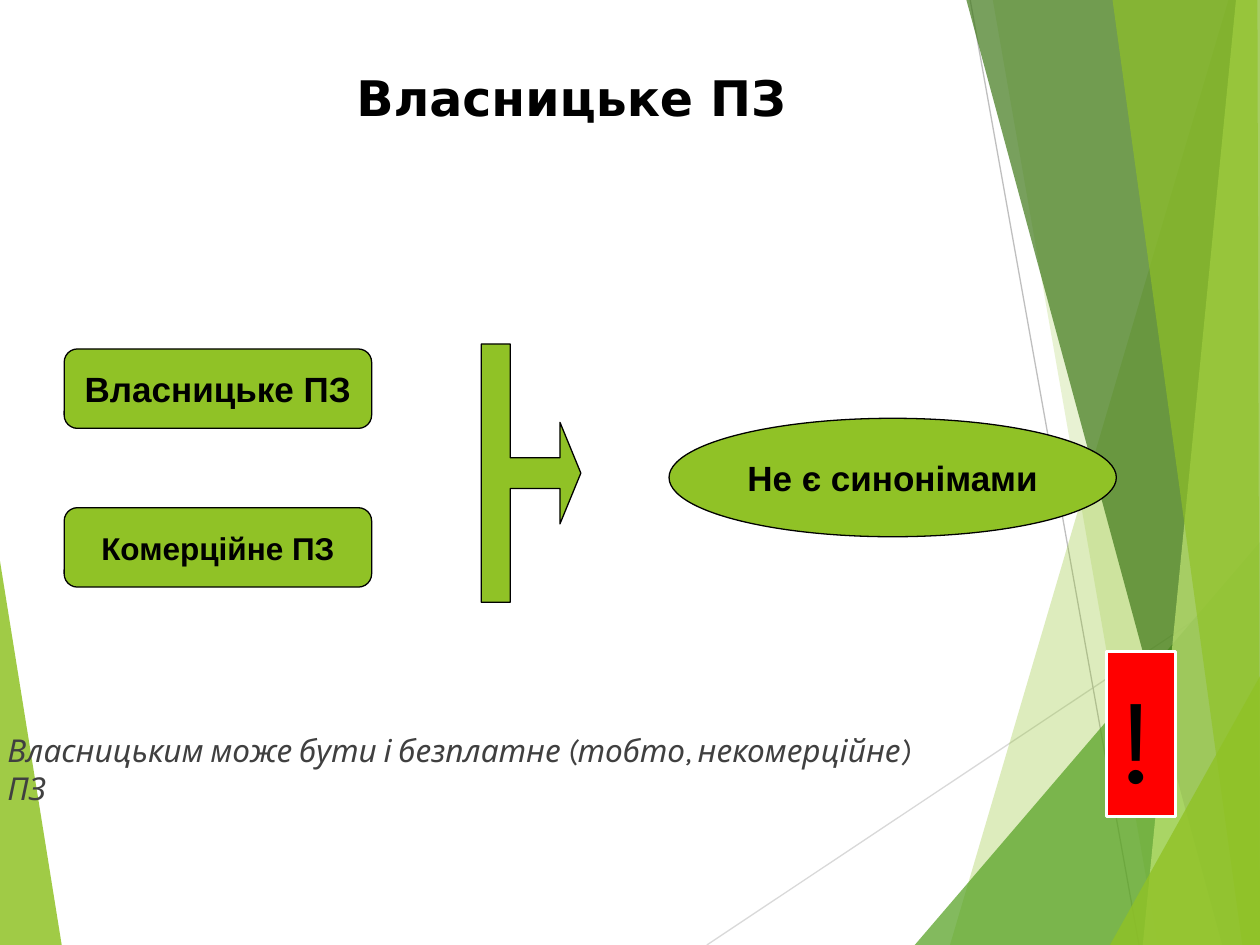
from lxml.etree import SubElement
from pptx import Presentation
from pptx.dml.color import RGBColor
from pptx.enum.shapes import MSO_CONNECTOR, MSO_SHAPE
from pptx.enum.text import MSO_ANCHOR, MSO_AUTO_SIZE, PP_ALIGN
from pptx.oxml.ns import qn
from pptx.util import Inches, Pt

GREEN = "90C226"
BLACK = "000000"
RIGHT = 10.01


def color(hex_code):
    return RGBColor.from_string(hex_code)


class SlideBuilder:
    """Holds the slide and the style its elements share."""

    label_font = "Arial"
    body_font = "Karla"
    title_font = "DejaVu Sans"

    def __init__(self, slide):
        self.slide = slide

    def facet(self, points, fill, opacity):
        """Draw a translucent polygon; opacity is in percent."""
        corners = [(Inches(x), Inches(y)) for x, y in points]
        builder = self.slide.shapes.build_freeform(*corners[0])
        builder.add_line_segments(corners[1:], close=True)
        shape = builder.convert_to_shape()
        shape.shadow.inherit = False
        shape.line.fill.background()
        shape.fill.solid()
        shape.fill.fore_color.rgb = color(fill)
        fill_color = shape._element.spPr.find(qn("a:solidFill"))[0]
        SubElement(fill_color, qn("a:alpha"), val=str(opacity * 1000))

    def line(self, start, end, line_color):
        connector = self.slide.shapes.add_connector(
            MSO_CONNECTOR.STRAIGHT, *map(Inches, start + end))
        connector.line.color.rgb = color(line_color)
        connector.line.width = Pt(0.75)
        SubElement(connector._element.spPr, qn("a:effectLst"))

    def shape(self, kind, box, fill=GREEN, outline=BLACK, width=0.75):
        shape = self.slide.shapes.add_shape(kind, *map(Inches, box))
        shape.shadow.inherit = False
        shape.fill.solid()
        shape.fill.fore_color.rgb = color(fill)
        shape.line.color.rgb = color(outline)
        shape.line.width = Pt(width)
        return shape

    def label(self, kind, box, text, size):
        """Draw a green shape with centred bold text."""
        shape = self.shape(kind, box)
        self.add_text(shape, text, size, self.label_font, bold=True,
                      align=PP_ALIGN.CENTER, anchor=MSO_ANCHOR.MIDDLE, wrap=False)

    def text_box(self, box, text, size, font, **style):
        text_box = self.slide.shapes.add_textbox(*map(Inches, box))
        self.add_text(text_box, text, size, font, **style)
        return text_box

    def add_text(self, shape, text, size, font, text_color=BLACK, bold=False,
                 italic=False, align=PP_ALIGN.LEFT, anchor=MSO_ANCHOR.TOP, wrap=True):
        frame = shape.text_frame
        frame.word_wrap = wrap
        frame.vertical_anchor = anchor
        paragraph = frame.paragraphs[0]
        paragraph.alignment = align
        run = paragraph.add_run()
        run.text = text
        run.font.size = Pt(size)
        run.font.name = font
        run.font.bold = bold
        run.font.italic = italic
        run.font.color.rgb = color(text_color)


def draw_background(builder):
    builder.facet([(-0.01, 4.39), (0.49, 7.5), (-0.01, 7.5)], GREEN, 85)
    builder.line((5.61, 7.5), (RIGHT, 4.57), "D9D9D9")
    builder.line((7.7, 0), (9.04, 7.5), "BFBFBF")
    # Left edge of each facet: x at the top, y of the top, x at the bottom
    facets = [
        (9.75, 0, 7.54, GREEN, 30),
        (7.88, 0, 9.19, GREEN, 20),
        (RIGHT, 4.29, 7.26, "54A021", 72),
        (7.67, 0, 9.7, "3F7819", 70),
        (9.81, 0, 9.07, "C0E474", 70),
        (8.83, 0, 9.86, GREEN, 65),
        (RIGHT, 5.35, 8.81, GREEN, 80),
    ]
    for top_x, top_y, bottom_x, fill, opacity in facets:
        # The 65 % facet tapers to the right and stops just inside the edge
        right_top, right_bottom = (9.98, 10) if opacity == 65 else (RIGHT, RIGHT)
        points = [(top_x, top_y), (bottom_x, 7.5), (right_bottom, 7.5)]
        if top_x < right_top:
            points.append((right_top, top_y))
        builder.facet(points, fill, opacity)


def main():
    presentation = Presentation()
    presentation.slide_width = Inches(10)
    presentation.slide_height = Inches(7.5)
    builder = SlideBuilder(presentation.slides.add_slide(presentation.slide_layouts[6]))

    draw_background(builder)

    remark = builder.text_box(
        (0, 5.7, 7.36, 0.79),
        "Власницьким може бути і безплатне (тобто, некомерційне) ПЗ",
        18, builder.body_font, text_color="404040", italic=True)
    remark.text_frame.margin_left = Inches(0.06)
    remark.text_frame.margin_top = Inches(0.1)
    remark.text_frame.paragraphs[0].space_before = Pt(10)

    terms = [("Власницьке ПЗ", 20), ("Комерційне ПЗ", 18)]
    for index, (term, size) in enumerate(terms):
        builder.label(MSO_SHAPE.ROUNDED_RECTANGLE,
                      (0.51, 2.77 + 1.26 * index, 2.44, 0.63), term, size)

    arrow = builder.shape(MSO_SHAPE.UP_ARROW_CALLOUT, (3.19, 3.36, 2.05, 0.79))
    arrow.rotation = 90
    for index, value in enumerate((0.31, 0.51, 0.21, 0.29)):
        arrow.adjustments[index] = value

    builder.label(MSO_SHAPE.OVAL, (5.31, 3.32, 3.55, 0.94), "Не є синонімами", 20)

    builder.text_box((2.73, 0.36, 3.74, 0.69), "Власницьке ПЗ", 28,
                     builder.title_font, bold=True, anchor=MSO_ANCHOR.BOTTOM)

    warning = builder.shape(MSO_SHAPE.RECTANGLE, (8.78, 5.17, 0.55, 1.31),
                            "FF0000", "FFFFFF", 1.5)
    builder.add_text(warning, "!", 72, builder.body_font)
    warning.text_frame.auto_size = MSO_AUTO_SIZE.SHAPE_TO_FIT_TEXT

    presentation.save("out.pptx")


if __name__ == "__main__":
    main()
